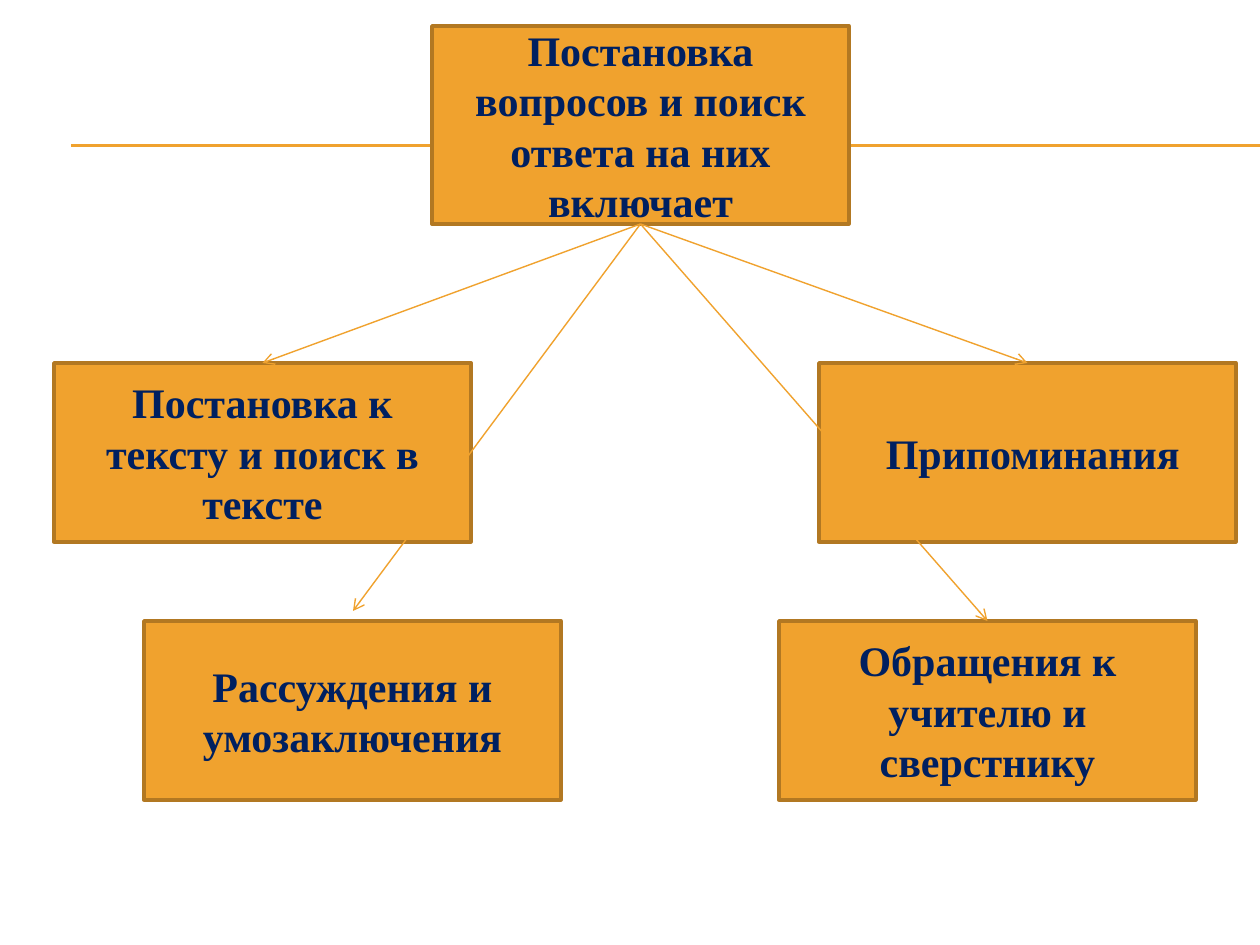
from lxml import etree
from pptx import Presentation
from pptx.dml.color import RGBColor
from pptx.enum.shapes import MSO_CONNECTOR, MSO_SHAPE
from pptx.enum.text import MSO_ANCHOR, PP_ALIGN
from pptx.oxml.ns import qn
from pptx.util import Emu, Pt

RECTANGLE = MSO_SHAPE.RECTANGLE
STRAIGHT = MSO_CONNECTOR.STRAIGHT
MIDDLE = MSO_ANCHOR.MIDDLE
CENTER = PP_ALIGN.CENTER
TOP, BOTTOM = 0, 2

EMU_PER_PX = 914400 / 126
COLORS = {"amber": "F0A22E", "border": "B27822", "text": "002060"}
BOX_WIDTH, BOX_HEIGHT, QUESTION_HEIGHT = 417, 179, 198
UPPER_ROW, LOWER_ROW = 363, 621


def px(length):
    return Emu(round(length * EMU_PER_PX))


def color(name):
    return RGBColor.from_string(COLORS[name])


class Diagram:
    font_name = "Times New Roman"
    font_size = Pt(24)

    def __init__(self, slide):
        self.slide = slide

    def box(self, left, top, lines, height=BOX_HEIGHT):
        box = self.slide.shapes.add_shape(
            RECTANGLE, px(left), px(top), px(BOX_WIDTH), px(height))
        box.shadow.inherit = False
        box.fill.solid()
        box.fill.fore_color.rgb = color("amber")
        box.line.color.rgb = color("border")
        box.line.width = Pt(2)
        frame = box.text_frame
        frame.word_wrap = True
        frame.vertical_anchor = MIDDLE
        frame.text = "\n".join(lines)
        for paragraph in frame.paragraphs:
            paragraph.alignment = CENTER
            paragraph.font.name = self.font_name
            paragraph.font.size = self.font_size
            paragraph.font.bold = True
            paragraph.font.color.rgb = color("text")
        return box

    def line(self, start, end, width=0.75):
        line = self.slide.shapes.add_connector(
            STRAIGHT, *map(px, start), *map(px, end))
        line.line.color.rgb = color("amber")
        line.line.width = Pt(width)
        etree.SubElement(line._element.spPr, qn("a:effectLst"))
        return line

    def arrow(self, source, end=(0, 0), target=None):
        arrow = self.line((0, 0), end, 0.79)
        arrow.begin_connect(source, BOTTOM)
        if target is not None:
            arrow.end_connect(target, TOP)
        etree.SubElement(arrow.line._get_or_add_ln(), qn("a:tailEnd"), type="arrow")


def main():
    presentation = Presentation()
    presentation.slide_width = px(1260)
    presentation.slide_height = px(945)
    diagram = Diagram(presentation.slides.add_slide(presentation.slide_layouts[6]))

    for rule_y in (145, 146):
        diagram.line((71, rule_y), (1260, rule_y))

    text_search = diagram.box(54, UPPER_ROW, ["Постановка к тексту и поиск в тексте"])
    question = diagram.box(
        432, 26, ["Постановка вопросов и поиск ответа на них", "включает"], QUESTION_HEIGHT)
    diagram.box(144, LOWER_ROW, ["Рассуждения и умозаключения"])
    recall = diagram.box(819, UPPER_ROW, [" Припоминания"])
    asking = diagram.box(779, LOWER_ROW, ["Обращения к учителю и сверстнику"])

    diagram.arrow(question, target=text_search)
    diagram.arrow(question, end=(353, 611))
    diagram.arrow(question, target=recall)
    diagram.arrow(question, target=asking)

    presentation.save("out.pptx")


if __name__ == "__main__":
    main()
